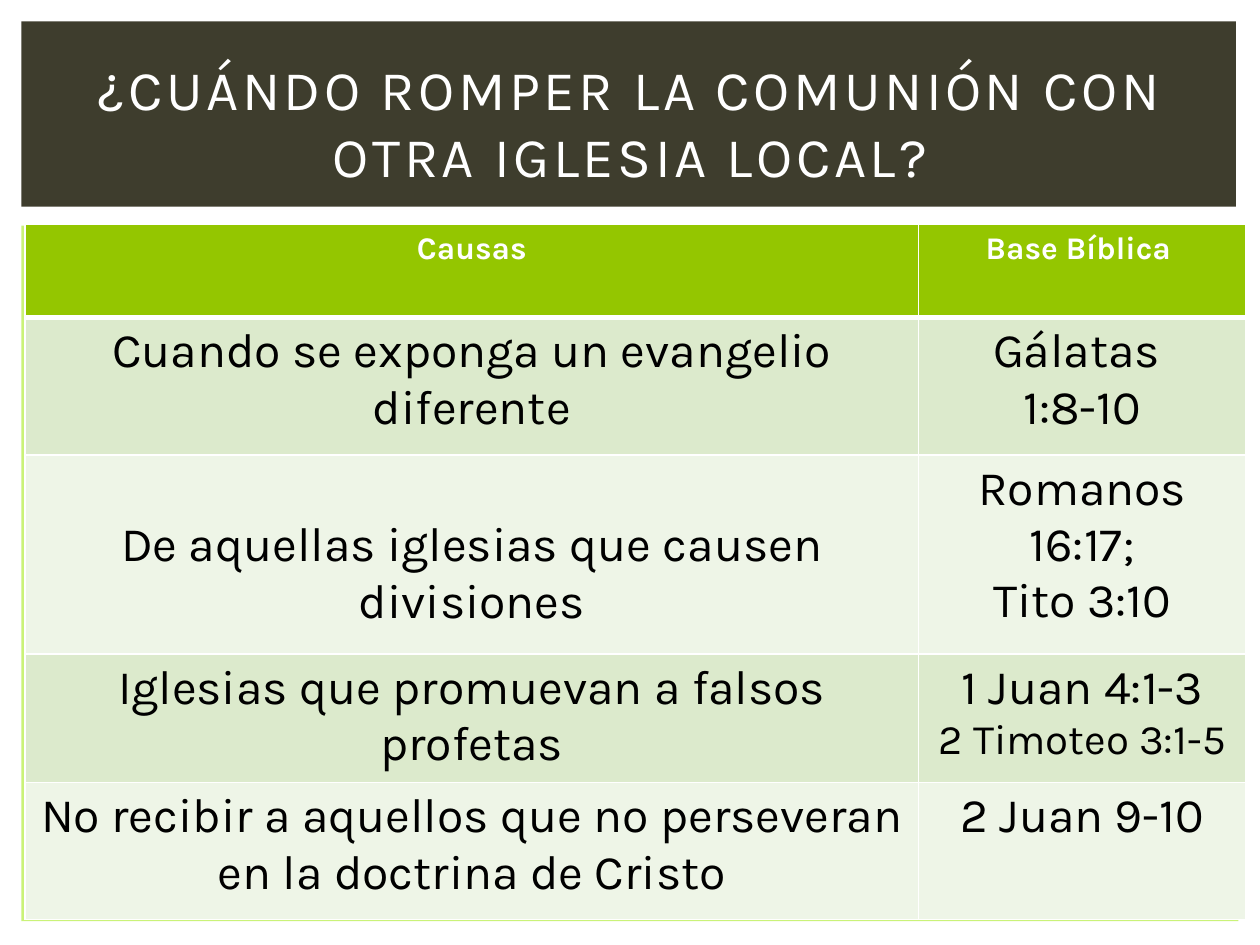
from dataclasses import dataclass

from lxml.etree import SubElement
from pptx import Presentation
from pptx.dml.color import RGBColor
from pptx.enum.shapes import MSO_SHAPE
from pptx.enum.text import MSO_ANCHOR, PP_ALIGN
from pptx.oxml.ns import qn
from pptx.util import Inches, Pt

FONT = "Karla"
COLORS = {
    "white": "FFFFFF",
    "black": "000000",
    "panel": "CAF278",
    "banner": "3E3D2D",
    "header": "94C600",
    "band_dark": "DCEACC",
    "band_light": "EEF5E7",
}
COLUMN_WIDTHS = (7.09, 2.6)
HEADER_HEIGHT = 0.74
BODY_SIZE = 27.5


@dataclass
class Cause:
    description: str
    references: tuple[str, ...]
    height: float
    top_margin: float = 0.05
    last_size: float = BODY_SIZE


CAUSES = [
    Cause("Cuando se exponga un evangelio diferente", ("Gálatas ", "1:8-10"), 1.09),
    Cause("De aquellas iglesias que causen divisiones",
          ("Romanos 16:17;", "Tito 3:10"), 1.58, top_margin=0.5),
    Cause("Iglesias que promuevan a falsos profetas",
          ("1 Juan 4:1-3", "2 Timoteo 3:1-5"), 1.02, last_size=24),
    Cause("No recibir a aquellos que no perseveran en la doctrina de Cristo",
          ("2 Juan 9-10",), 1.09),
]


def rgb(name: str) -> RGBColor:
    return RGBColor.from_string(COLORS[name])


def add_block(slide, left: float, top: float, width: float, height: float, color: str) -> None:
    block = slide.shapes.add_shape(
        MSO_SHAPE.RECTANGLE, Inches(left), Inches(top), Inches(width), Inches(height))
    block.shadow.inherit = False
    block.fill.solid()
    block.fill.fore_color.rgb = rgb(color)
    block.line.fill.background()


def format_paragraph(paragraph, size: float, color: str, bold: bool = False) -> None:
    paragraph.alignment = PP_ALIGN.CENTER
    font = paragraph.font
    font.name, font.size, font.bold = FONT, Pt(size), bold
    font.color.rgb = rgb(color)


def set_borders(cell, bottom: float) -> None:
    properties = cell._tc.get_or_add_tcPr()
    sides = (("a:lnL", 1), ("a:lnR", 1), ("a:lnT", 1), ("a:lnB", bottom))
    for position, (side, width) in enumerate(sides):
        line = SubElement(properties, qn(side), w=str(Pt(width)))
        fill = SubElement(line, qn("a:solidFill"))
        SubElement(fill, qn("a:srgbClr"), val=COLORS["white"])
        properties.insert(position, line)  # borders come before the fill


def fill_cell(cell, lines: tuple[str, ...], background: str, size: float = BODY_SIZE,
              color: str = "black", bold: bool = False, bottom: float = 1) -> None:
    cell.fill.solid()
    cell.fill.fore_color.rgb = rgb(background)
    cell.text = "\n".join(lines)
    for paragraph in cell.text_frame.paragraphs:
        format_paragraph(paragraph, size, color, bold)
    set_borders(cell, bottom)


def add_title(slide, text: str) -> None:
    title = slide.shapes.title
    title.left, title.top = Inches(0.42), Inches(0.39)
    title.width, title.height = Inches(9.17), Inches(1.15)
    title.text = text
    title.text_frame.vertical_anchor = MSO_ANCHOR.MIDDLE
    heading = title.text_frame.paragraphs[0]
    format_paragraph(heading, 32, "white")
    heading.runs[0]._r.get_or_add_rPr().set("spc", "200")
    # Bring the title in front of the banner
    slide.shapes._spTree.append(title._element)


def add_causes_table(slide) -> None:
    heights = [HEADER_HEIGHT] + [cause.height for cause in CAUSES]
    table = slide.shapes.add_table(
        len(heights), len(COLUMN_WIDTHS), Inches(0.2), Inches(1.78),
        Inches(sum(COLUMN_WIDTHS)), Inches(sum(heights))).table
    for column, width in zip(table.columns, COLUMN_WIDTHS):
        column.width = Inches(width)
    for row, height in zip(table.rows, heights):
        row.height = Inches(height)

    # Header row
    for column, heading in enumerate(("Causas", "Base Bíblica ")):
        fill_cell(table.cell(0, column), (heading,), "header", 18, "white", True, bottom=3)

    # One banded row per cause
    for row, cause in enumerate(CAUSES, start=1):
        band = "band_dark" if row % 2 else "band_light"
        description, references = table.cell(row, 0), table.cell(row, 1)
        fill_cell(description, (cause.description,), band)
        description.margin_top = Inches(cause.top_margin)
        fill_cell(references, cause.references, band)
        references.text_frame.paragraphs[-1].font.size = Pt(cause.last_size)


def main() -> None:
    prs = Presentation()
    prs.slide_width, prs.slide_height = Inches(10), Inches(7.5)
    slide = prs.slides.add_slide(prs.slide_layouts[5])

    # Panel behind the table and banner behind the title
    add_block(slide, 0.17, 1.79, 9.66, 5.52, "panel")
    add_block(slide, 0.17, 0.17, 9.64, 1.47, "banner")

    add_title(slide, "¿CUÁNDO ROMPER LA COMUNIÓN CON OTRA IGLESIA LOCAL?")
    add_causes_table(slide)
    prs.save("out.pptx")


if __name__ == "__main__":
    main()
